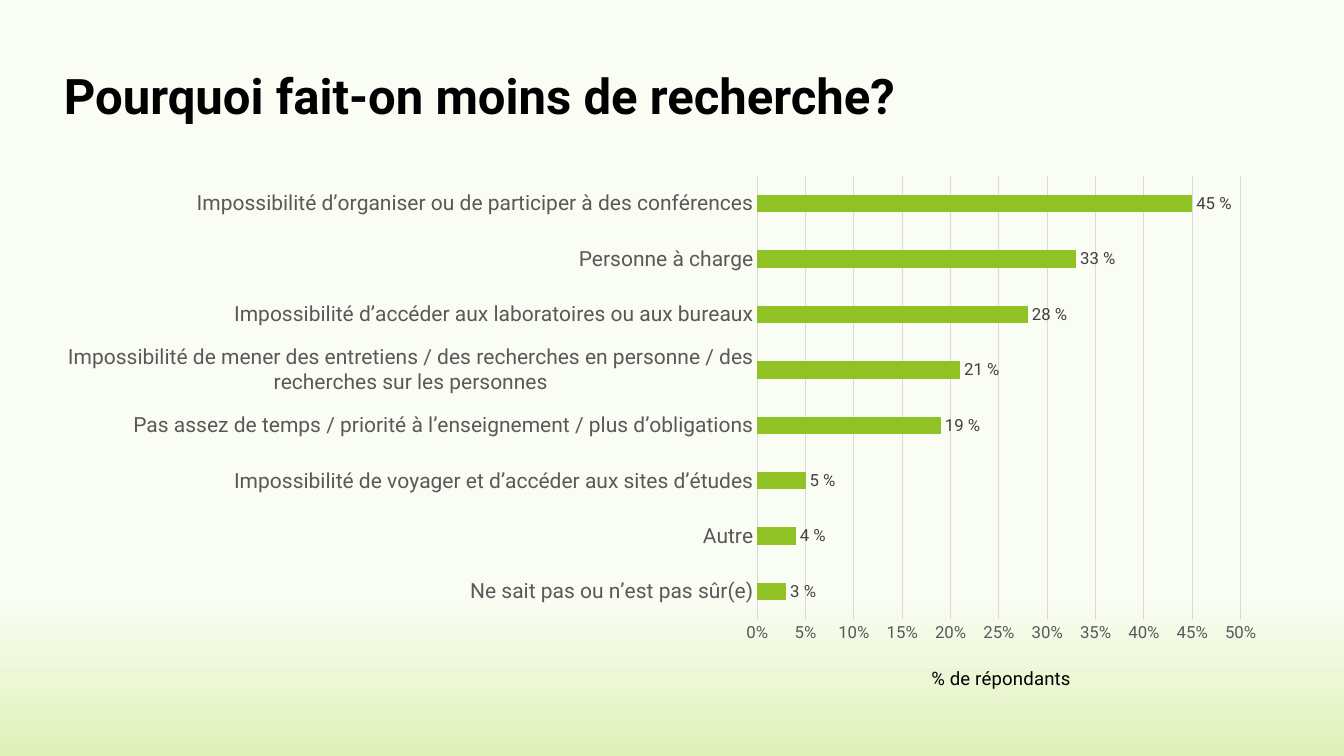
from dataclasses import dataclass

from pptx import Presentation
from pptx.chart.data import CategoryChartData
from pptx.dml.color import RGBColor
from pptx.enum.chart import XL_CHART_TYPE as ChartType, XL_LABEL_POSITION as LabelPosition, XL_TICK_MARK as TickMark
from pptx.enum.text import MSO_ANCHOR as Anchor, MSO_AUTO_SIZE as AutoSize, PP_ALIGN as Align
from pptx.oxml import parse_xml
from pptx.oxml.ns import nsdecls
from pptx.util import Inches, Pt

FONT = "Roboto"
BLACK = RGBColor(0x00, 0x00, 0x00)
DARK_GREY = RGBColor(0x40, 0x40, 0x40)
GREY = RGBColor(0x59, 0x59, 0x59)
LIGHT_GREY = RGBColor(0xD9, 0xD9, 0xD9)
GREEN = RGBColor(0x90, 0xC2, 0x26)
CREAM = RGBColor(0xFA, 0xFD, 0xF3)
PALE_GREEN = RGBColor(0xDF, 0xF1, 0xB9)

WIDTH, HEIGHT = Inches(13.33), Inches(7.5)


@dataclass(frozen=True)
class Area:
    left: float
    top: float
    width: float
    height: float

    def lengths(self) -> tuple[int, int, int, int]:
        return (int(self.left * WIDTH), int(self.top * HEIGHT),
                int(self.width * WIDTH), int(self.height * HEIGHT))


@dataclass(frozen=True)
class Reason:
    label: str
    share: float


TITLE_AREA = Area(0.04, 0.08, 0.703, 0.125)
CHART_AREA = Area(0.023, 0.232, 0.927, 0.688)
PLOT_AREA = Area(0.583, 0, 0.388, 0.861)

REASONS = [
    Reason("Impossibilité d’organiser ou de participer à des conférences", 0.45),
    Reason("Personne à charge", 0.33),
    Reason("Impossibilité d’accéder aux laboratoires ou aux bureaux", 0.28),
    Reason("Impossibilité de mener des entretiens / des recherches en personne / "
           "des recherches sur les personnes", 0.21),
    Reason("Pas assez de temps / priorité à l’enseignement / plus d’obligations", 0.19),
    Reason("Impossibilité de voyager et d’accéder aux sites d’études", 0.05),
    Reason("Autre", 0.04),
    Reason("Ne sait pas ou n’est pas sûr(e)", 0.03),
]


def format_font(font, size: float, color: RGBColor, bold: bool = False) -> None:
    font.name = FONT
    font.size = Pt(size)
    font.bold = bold
    font.color.rgb = color


def write_text(frame, text: str, *, size: float, color: RGBColor,
               bold: bool = False, align=Align.LEFT) -> None:
    para = frame.paragraphs[0]
    para.alignment = align
    span = para.add_run()
    span.text = text
    format_font(span.font, size, color, bold)


def manual_layout(values: dict[str, float], inner: bool = False):
    target = '<c:layoutTarget val="inner"/>' if inner else ""
    modes = "".join(f'<c:{key}Mode val="edge"/>' for key in "xy")
    places = "".join(f'<c:{key} val="{value}"/>' for key, value in values.items())
    return parse_xml(f'<c:layout {nsdecls("c")}><c:manualLayout>{target}{modes}{places}'
                     '</c:manualLayout></c:layout>')


def replace_layout(parent, layout, index: int) -> None:
    for old in parent.xpath("c:layout"):
        parent.remove(old)
    parent.insert(index, layout)


def paint_background(page) -> None:
    fill = page.background.fill
    fill.gradient()
    fill.gradient_angle = 270
    for stop, position, color in zip(fill.gradient_stops, (0.79, 1), (CREAM, PALE_GREEN)):
        stop.position = position
        stop.color.rgb = color


def add_title(page, text: str) -> None:
    box = page.shapes.title
    box.left, box.top, box.width, box.height = TITLE_AREA.lengths()
    frame = box.text_frame
    frame.word_wrap = True
    frame.auto_size = AutoSize.NONE
    frame.vertical_anchor = Anchor.TOP
    write_text(frame, text, size=35, color=BLACK, bold=True)


def format_axes(chart) -> None:
    reasons, shares = chart.category_axis, chart.value_axis
    for axis, size in ((reasons, 15), (shares, 12)):
        axis.major_tick_mark = axis.minor_tick_mark = TickMark.NONE
        format_font(axis.tick_labels.font, size, GREY)
    shares.has_major_gridlines = True
    for line in (reasons.format.line, shares.major_gridlines.format.line):
        line.color.rgb = LIGHT_GREY
        line.width = Pt(0.75)
    shares.format.line.fill.background()
    shares.minimum_scale, shares.maximum_scale, shares.major_unit = 0, 0.5, 0.05
    shares.tick_labels.number_format = "0%"
    shares.tick_labels.number_format_is_linked = False
    write_text(shares.axis_title.text_frame, "% de répondants",
               size=13.3, color=BLACK, align=Align.CENTER)
    replace_layout(shares.axis_title._element, manual_layout({"x": 0.72, "y": 0.945}), 1)


def format_bars(plot) -> None:
    plot.gap_width = 219
    plot.vary_by_categories = False
    bars = plot.series[0]
    bars.format.fill.solid()
    bars.format.fill.fore_color.rgb = GREEN
    labels = bars.data_labels
    labels.show_value = True
    labels.position = LabelPosition.OUTSIDE_END
    labels.number_format = "0\\ %"
    labels.number_format_is_linked = False
    format_font(labels.font, 12, DARK_GREY)


def add_reasons_chart(page) -> None:
    data = CategoryChartData(number_format="0%")
    upward = REASONS[::-1]
    data.categories = [reason.label for reason in upward]
    data.add_series("Series 1", [reason.share for reason in upward])
    chart = page.shapes.add_chart(ChartType.BAR_CLUSTERED, *CHART_AREA.lengths(), data).chart
    chart.has_title = chart.has_legend = False
    format_font(chart.font, 10, BLACK)
    format_axes(chart)
    format_bars(chart.plots[0])
    place = {"x": PLOT_AREA.left, "y": PLOT_AREA.top, "w": PLOT_AREA.width, "h": PLOT_AREA.height}
    plot_area = chart._chartSpace.xpath("c:chart/c:plotArea")[0]
    replace_layout(plot_area, manual_layout(place, inner=True), 0)


def main() -> None:
    deck = Presentation()
    deck.slide_width, deck.slide_height = WIDTH, HEIGHT
    page = deck.slides.add_slide(deck.slide_layouts[5])
    paint_background(page)
    add_title(page, "Pourquoi fait-on moins de recherche?")
    add_reasons_chart(page)
    deck.save("out.pptx")


if __name__ == "__main__":
    main()
